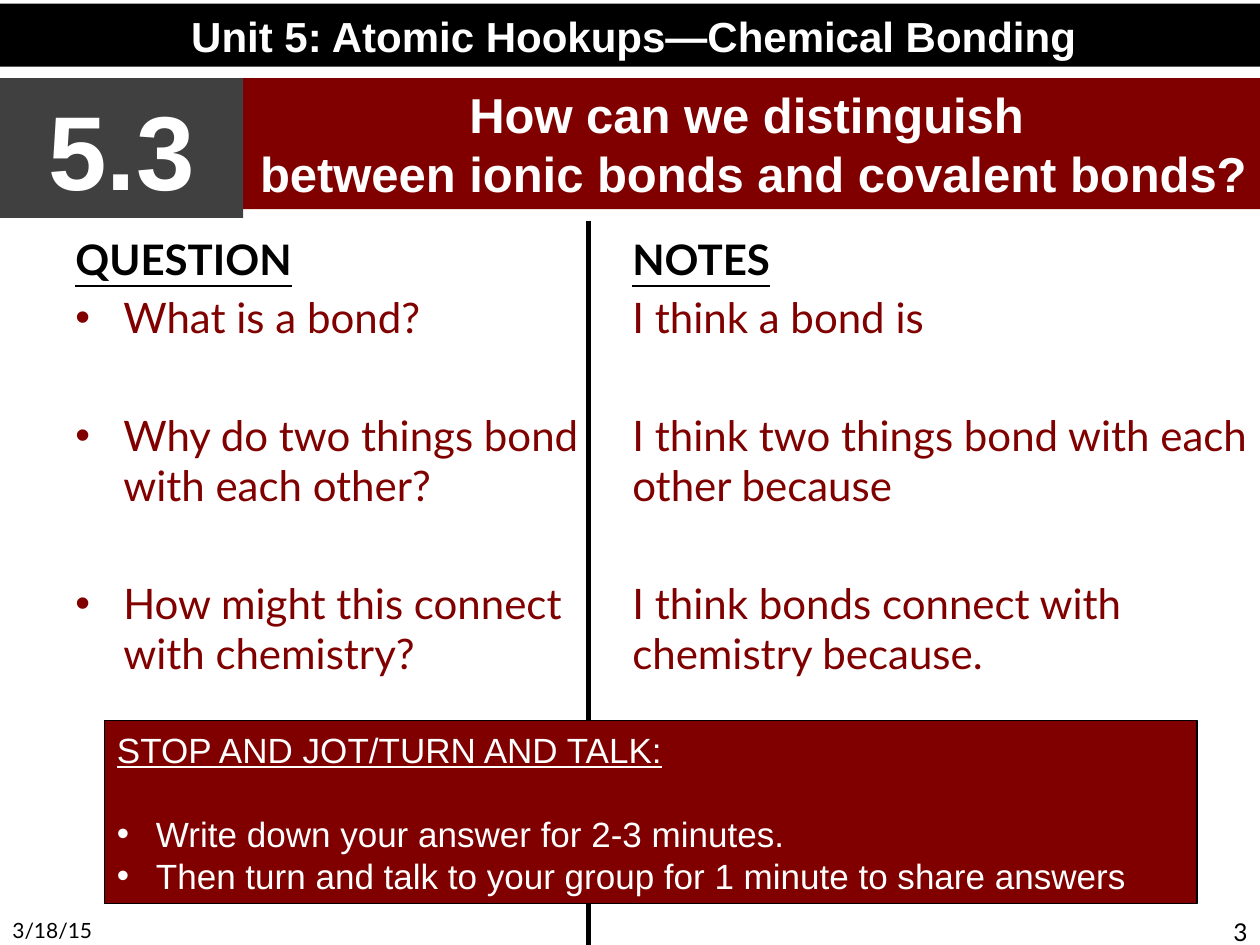
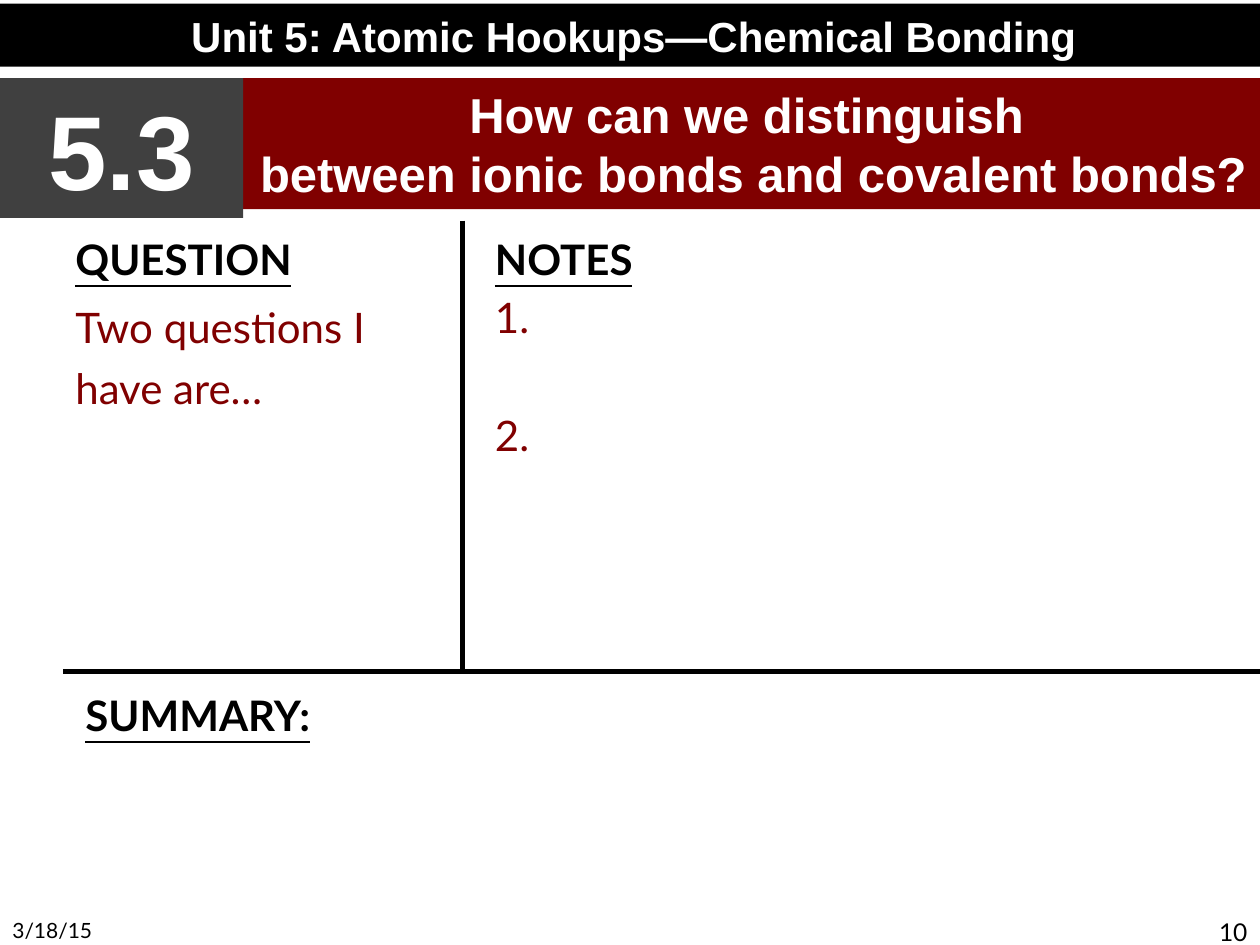
from dataclasses import dataclass

from lxml import etree
from pptx import Presentation
from pptx.dml.color import RGBColor
from pptx.enum.shapes import MSO_CONNECTOR, MSO_SHAPE
from pptx.enum.text import MSO_ANCHOR, MSO_AUTO_SIZE, PP_ALIGN
from pptx.oxml.ns import qn
from pptx.util import Inches, Pt

LEFT, CENTER, RIGHT = PP_ALIGN.LEFT, PP_ALIGN.CENTER, PP_ALIGN.RIGHT
TOP, MIDDLE = MSO_ANCHOR.TOP, MSO_ANCHOR.MIDDLE
NO_AUTOFIT = MSO_AUTO_SIZE.NONE
RECTANGLE = MSO_SHAPE.RECTANGLE
STRAIGHT = MSO_CONNECTOR.STRAIGHT
TITLE_ONLY = 5


@dataclass(frozen=True)
class Theme:
    black: RGBColor = RGBColor(0, 0, 0)
    white: RGBColor = RGBColor(255, 255, 255)
    gray: RGBColor = RGBColor(0x40, 0x40, 0x40)
    maroon: RGBColor = RGBColor(0x80, 0, 0)
    band_font: str = "Arial"
    body_font: str = "Lato"
    number_size: int = 60
    title_size: int = 28
    body_size: int = 24
    task_size: int = 20
    page_size: int = 14
    date_size: int = 12
    line_ratio: float = 1.2
    paragraph_ratio: float = 0.2
    rule_width: int = 3


class NotesDeck:
    """Builds two-column note slides in one theme."""

    def __init__(self, theme):
        self.theme = theme
        self.presentation = Presentation()
        self.presentation.slide_width = Inches(10)
        self.presentation.slide_height = Inches(7.5)
        self.slide = None

    def start_slide(self, unit, number, question, date, page):
        theme = self.theme
        layout = self.presentation.slide_layouts[TITLE_ONLY]
        self.slide = self.presentation.slides.add_slide(layout)
        self.band(0, 0.03, 10.06, 0.5, theme.black, unit, theme.body_size)
        self.band(0, 0.62, 1.93, 1.11, theme.gray, number, theme.number_size)
        self.title(question)
        self.footer(0, date, theme.date_size, LEFT)
        self.footer(7.67, page, theme.page_size, RIGHT)

    def paragraph(self, frame, text, size, color, font_name, align=LEFT, bold=False,
                  underline=False, bullet_indent=None, space_before=0, line_spacing=None):
        paragraph = frame.paragraphs[0]
        if paragraph.text:
            paragraph = frame.add_paragraph()
        paragraph.text = text
        paragraph.alignment = align
        paragraph.space_before = Pt(space_before)
        if line_spacing:
            paragraph.line_spacing = line_spacing
        if bullet_indent:
            self.bullet(paragraph, Inches(bullet_indent))
        font = paragraph.font
        font.name, font.size = font_name, Pt(size)
        font.bold, font.underline = bold, underline
        font.color.rgb = color

    def bullet(self, paragraph, indent):
        properties = paragraph._p.get_or_add_pPr()
        properties.set("marL", str(indent))
        properties.set("indent", str(-indent))
        etree.SubElement(properties, qn("a:buFont"), typeface="Arial")
        etree.SubElement(properties, qn("a:buChar"), char="•")

    def band_line(self, frame, text, size, **style):
        """Adds one white line with the fixed line height of the bands."""
        self.paragraph(frame, text, size, self.theme.white, self.theme.band_font,
                       line_spacing=Pt(size * self.theme.line_ratio), **style)

    def prepare_frame(self, shape, anchor):
        frame = shape.text_frame
        frame.word_wrap = True
        frame.auto_size = NO_AUTOFIT
        frame.vertical_anchor = anchor
        return frame

    def box(self, left, top, width, height, fill):
        shape = self.slide.shapes.add_shape(
            RECTANGLE, Inches(left), Inches(top), Inches(width), Inches(height))
        shape.shadow.inherit = False
        shape.fill.solid()
        shape.fill.fore_color.rgb = fill
        shape.line.fill.background()
        return shape

    def band(self, left, top, width, height, fill, text, size):
        shape = self.box(left, top, width, height, fill)
        frame = self.prepare_frame(shape, MIDDLE)
        self.band_line(frame, text, size, align=CENTER, bold=True)

    def title(self, lines):
        title = self.slide.shapes.title
        title.left, title.top = Inches(1.93), Inches(0.62)
        title.width, title.height = Inches(8.1), Inches(1.04)
        title.fill.solid()
        title.fill.fore_color.rgb = self.theme.maroon
        frame = self.prepare_frame(title, MIDDLE)
        for line in lines:
            self.band_line(frame, line, self.theme.title_size, align=CENTER, bold=True)

    def text_frame(self, left, top, width, height):
        shape = self.slide.shapes.add_textbox(
            Inches(left), Inches(top), Inches(width), Inches(height))
        return self.prepare_frame(shape, TOP)

    def footer(self, left, text, size, align):
        frame = self.text_frame(left, 7.23, 2.33, 0.27)
        self.paragraph(frame, text, size, self.theme.black, self.theme.body_font, align)

    def section(self, left, top, width, height, heading, entries=(), **style):
        """Adds an underlined heading and entries with one free line between them."""
        theme = self.theme
        frame = self.text_frame(left, top, width, height)
        self.paragraph(frame, heading, theme.body_size, theme.black, theme.body_font,
                       bold=True, underline=True)
        gap = theme.body_size * theme.paragraph_ratio
        free_line = theme.body_size * theme.line_ratio + gap
        for index, entry in enumerate(entries):
            self.paragraph(frame, entry, theme.body_size, theme.maroon, theme.body_font,
                           space_before=gap + (free_line if index else 0), **style)

    def rule(self, start_x, start_y, end_x, end_y):
        connector = self.slide.shapes.add_connector(
            STRAIGHT, Inches(start_x), Inches(start_y), Inches(end_x), Inches(end_y))
        connector.line.color.rgb = self.theme.black
        connector.line.width = Pt(self.theme.rule_width)
        etree.SubElement(connector._element.spPr, qn("a:effectLst"))

    def task_box(self, heading, tasks):
        size = self.theme.task_size
        shape = self.box(0.83, 5.72, 8.67, 1.45, self.theme.maroon)
        shape.line.color.rgb = self.theme.black
        shape.line.width = Pt(0.75)
        frame = self.prepare_frame(shape, MIDDLE)
        self.band_line(frame, heading, size, underline=True)
        for index, task in enumerate(tasks):
            free_line = 0 if index else size * self.theme.line_ratio
            self.band_line(frame, task, size, bullet_indent=0.31, space_before=free_line)


def main():
    deck = NotesDeck(Theme())
    header = {
        "unit": "Unit 5: Atomic Hookups—Chemical Bonding",
        "number": "5.3",
        "question": ["How can we distinguish ", "between ionic bonds and covalent bonds?"],
        "date": "3/18/15",
    }

    deck.start_slide(**header, page="3")
    deck.section(0.5, 1.8, 4.25, 4.95, "QUESTION", [
        "What is a bond?",
        "Why do two things bond with each other?",
        "How might this connect with chemistry?",
    ], bullet_indent=0.38)
    deck.rule(4.67, 1.75, 4.67, 7.5)
    deck.section(4.92, 1.8, 5.08, 4.95, "NOTES", [
        "I think a bond is",
        "I think two things bond with each other because",
        "I think bonds connect with chemistry because.",
    ])
    deck.task_box("STOP AND JOT/TURN AND TALK:", [
        "Write down your answer for 2-3 minutes.",
        "Then turn and talk to your group for 1 minute to share answers",
    ])

    deck.start_slide(**header, page="10")
    deck.section(0.5, 1.8, 3.17, 3.45, "QUESTION", ["Two questions I have are…"],
                 line_spacing=1.2)
    deck.rule(3.67, 1.75, 3.67, 5.33)
    deck.section(3.83, 1.8, 6.17, 3.45, "NOTES", ["1.", "2."])
    deck.rule(10, 5.33, 0.5, 5.33)
    deck.section(0.58, 5.42, 9.42, 2.08, "SUMMARY:")

    deck.presentation.save("out.pptx")


if __name__ == "__main__":
    main()
